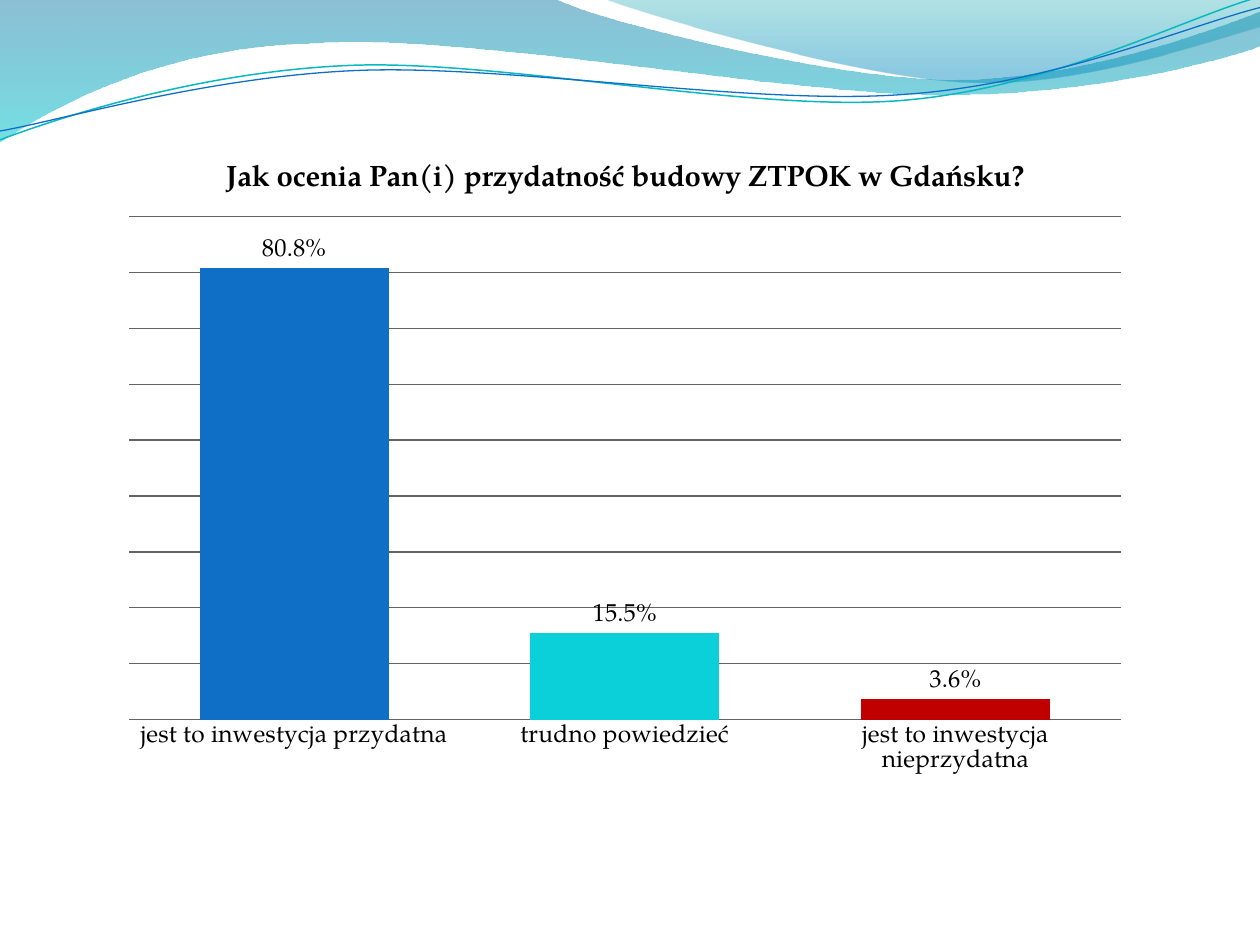
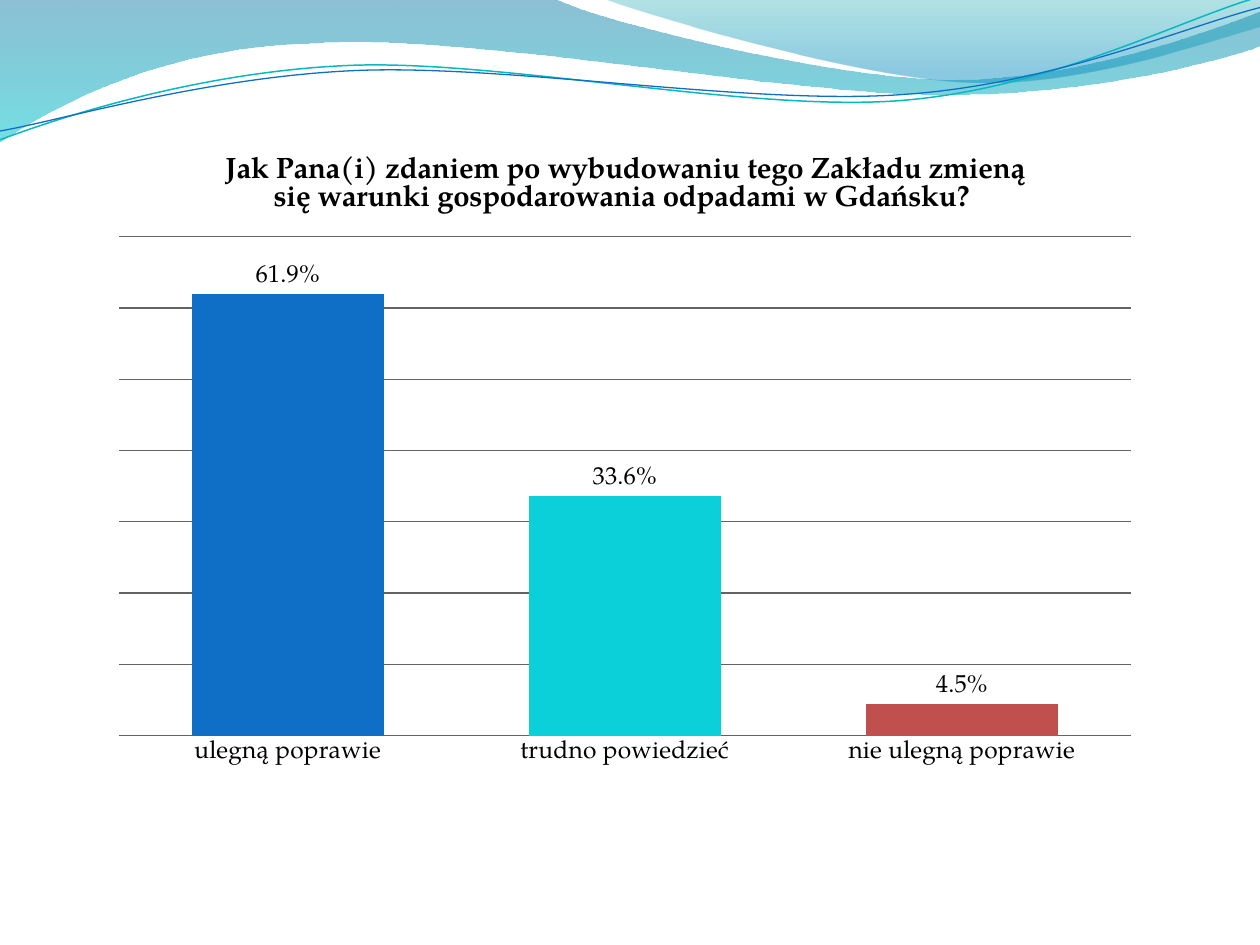
from lxml.etree import SubElement
from pptx import Presentation
from pptx.chart.data import CategoryChartData
from pptx.dml.color import RGBColor
from pptx.enum.chart import XL_CHART_TYPE as ChartType
from pptx.enum.chart import XL_LABEL_POSITION as LabelPosition
from pptx.enum.chart import XL_TICK_MARK as TickMark
from pptx.oxml.ns import qn
from pptx.util import Inches, Pt

COLORS = {
    "text": "000000",
    "grid": "636363",
    "blue": "0F6FC6",
    "cyan": "0BD0D9",
    "red": "C00000",
    "soft red": "C0504D",
    "teal line": "0AB8BF",
    "band top": "0074A1",
    "band bottom": "00C6CF",
    "corner top": "00A1A9",
    "corner bottom": "008BBF",
}
FONT = "TeX Gyre Pagella"

# An outline is a list of steps: two numbers draw a line, six a Bézier curve.
BAND = [
    (0, 0), (4.4, -0.01),
    (4.76, 0.17, 6.64, 0.63, 7.58, 0.63), (8.53, 0.63, 9.58, 0.26, 10, 0.09),
    (10.01, 0.36),
    (9.83, 0.44, 8.7, 0.76, 7.46, 0.75), (6.22, 0.75, 3.82, 0.28, 2.57, 0.34),
    (1.29, 0.36, 0.46, 0.83, -0.01, 1.13),
]
CORNER = [
    (4.79, -0.01),
    (5.09, 0.11, 6.82, 0.62, 7.69, 0.65), (8.56, 0.69, 9.61, 0.32, 10, 0.21),
    (10, 0),
]
TEAL_WAVE = [
    (0, 1.11),
    (0.48, 0.93, 1.58, 0.57, 2.77, 0.52), (3.95, 0.47, 5.93, 0.89, 7.13, 0.8),
    (8.33, 0.71, 9.38, 0.15, 9.98, -0.02),
]
BLUE_WAVE = [
    (0, 1.04),
    (0.47, 0.96, 1.64, 0.61, 2.83, 0.56), (4.03, 0.51, 5.97, 0.84, 7.17, 0.75),
    (8.36, 0.67, 9.41, 0.21, 10, 0.06),
]


def rgb(name):
    return RGBColor.from_string(COLORS[name])


def style_font(font, size, bold=False):
    font.name, font.size, font.bold = FONT, Pt(size), bold
    font.color.rgb = rgb("text")


def add_outline(slide, outline, close):
    """Build a freeform, then merge each curve's three segments into one Bézier."""
    start, *others = [
        (Inches(step[i]), Inches(step[i + 1]))
        for step in outline for i in range(0, len(step), 2)]
    builder = slide.shapes.build_freeform(*start)
    builder.add_line_segments(others, close=close)
    shape = builder.convert_to_shape()
    shape.shadow.inherit = False

    segments = iter(list(shape.element.iter(qn("a:lnTo"))))
    for step in outline[1:]:
        segment = next(segments)
        if len(step) == 6:
            segment.tag = qn("a:cubicBezTo")
            for _ in range(2):
                extra = next(segments)
                segment.append(extra[0])
                extra.getparent().remove(extra)
    return shape


def add_gradient_area(slide, outline, stops):
    """Fill an outline downwards; a stop is (position, colour, opacity in percent)."""
    shape = add_outline(slide, outline, close=True)
    shape.line.fill.background()
    shape.fill.gradient()
    shape.fill.gradient_angle = 270
    for stop, (position, color, _) in zip(shape.fill.gradient_stops, stops):
        stop.position = position
        stop.color.rgb = rgb(color)
    for color_element, (_, _, opacity) in zip(shape.element.iter(qn("a:srgbClr")), stops):
        SubElement(color_element, qn("a:alpha"), val=str(opacity * 1000))
    return shape


def add_wave_line(slide, outline, color, width):
    shape = add_outline(slide, outline, close=False)
    shape.fill.background()
    shape.line.color.rgb = rgb(color)
    shape.line.width = Pt(width)
    return shape


def add_wave_header(slide, master):
    """Draw the header, then hand it to the master so that all slides share it."""
    header = [
        add_gradient_area(slide, BAND, [(0, "band top", 45), (1, "band bottom", 55)]),
        add_gradient_area(slide, CORNER, [(0, "corner top", 30), (0.8, "corner bottom", 45)]),
        add_wave_line(slide, TEAL_WAVE, "teal line", 0.85),
        add_wave_line(slide, BLUE_WAVE, "blue", 0.75),
    ]
    for shape in header:
        master.shapes.element.append(shape.element)


def add_answer_chart(slide, box, question, answers, maximum):
    """Add a column chart; an answer is (label, share, colour)."""
    data = CategoryChartData(number_format="0.0%")
    data.categories = [label for label, _, _ in answers]
    data.add_series("Series 1", [share for _, share, _ in answers])
    frame = slide.shapes.add_chart(
        ChartType.COLUMN_CLUSTERED, *map(Inches, box), data)
    chart = frame.chart
    style_font(chart.font, 14)
    chart.has_legend = False

    chart.has_title = True
    chart.chart_title.include_in_layout = False
    title = chart.chart_title.text_frame
    title.text = question
    style_font(title.paragraphs[0].font, 16.8, bold=True)

    plot = chart.plots[0]
    plot.gap_width, plot.overlap = 75, -25
    plot.vary_by_categories = False
    series = plot.series[0]
    series.format.fill.solid()
    series.format.fill.fore_color.rgb = rgb(answers[0][2])
    for index, (_, _, color) in enumerate(answers[1:], start=1):
        fill = series.points[index].format.fill
        fill.solid()
        fill.fore_color.rgb = rgb(color)
    labels = series.data_labels
    labels.show_value = True
    labels.number_format, labels.number_format_is_linked = "0.0%", False
    labels.position = LabelPosition.OUTSIDE_END
    style_font(labels.font, 14)

    shares = chart.value_axis
    shares.visible = False
    shares.minimum_scale, shares.maximum_scale, shares.major_unit = 0, maximum, 0.1
    shares.has_major_gridlines = True
    chart.category_axis.major_tick_mark = TickMark.NONE
    for line in (shares.major_gridlines.format.line, chart.category_axis.format.line):
        line.color.rgb = rgb("grid")
        line.width = Pt(0.75)


def main():
    presentation = Presentation()
    presentation.slide_width, presentation.slide_height = Inches(10), Inches(7.5)
    layout = presentation.slide_layouts[6]

    usefulness = presentation.slides.add_slide(layout)
    add_wave_header(usefulness, presentation.slide_master)
    add_answer_chart(
        usefulness, (0.86, 1.09, 8.2, 5.16),
        "Jak ocenia Pan(i) przydatność budowy ZTPOK w Gdańsku?",
        [("jest to inwestycja przydatna", 0.808, "blue"),
         ("trudno powiedzieć", 0.155, "cyan"),
         ("jest to inwestycja nieprzydatna", 0.036, "red")],
        maximum=0.9)

    conditions = presentation.slides.add_slide(layout)
    add_answer_chart(
        conditions, (0.78, 1.02, 8.36, 5.16),
        "Jak Pana(i) zdaniem po wybudowaniu tego Zakładu zmieną "
        "się warunki gospodarowania odpadami w Gdańsku? ",
        [("ulegną poprawie", 0.619, "blue"),
         ("trudno powiedzieć", 0.336, "cyan"),
         ("nie ulegną poprawie", 0.045, "soft red")],
        maximum=0.7)

    presentation.save("out.pptx")


if __name__ == "__main__":
    main()
